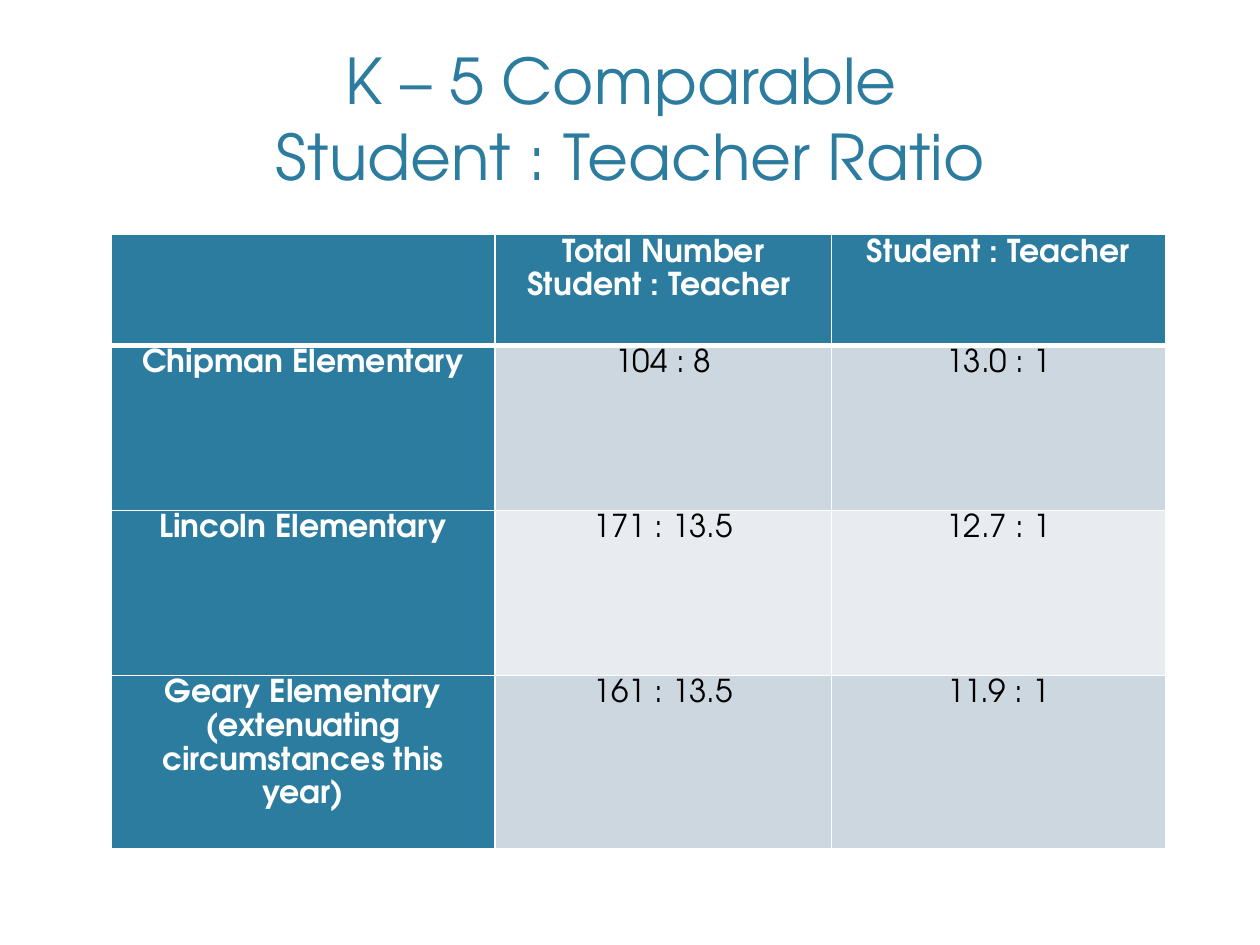
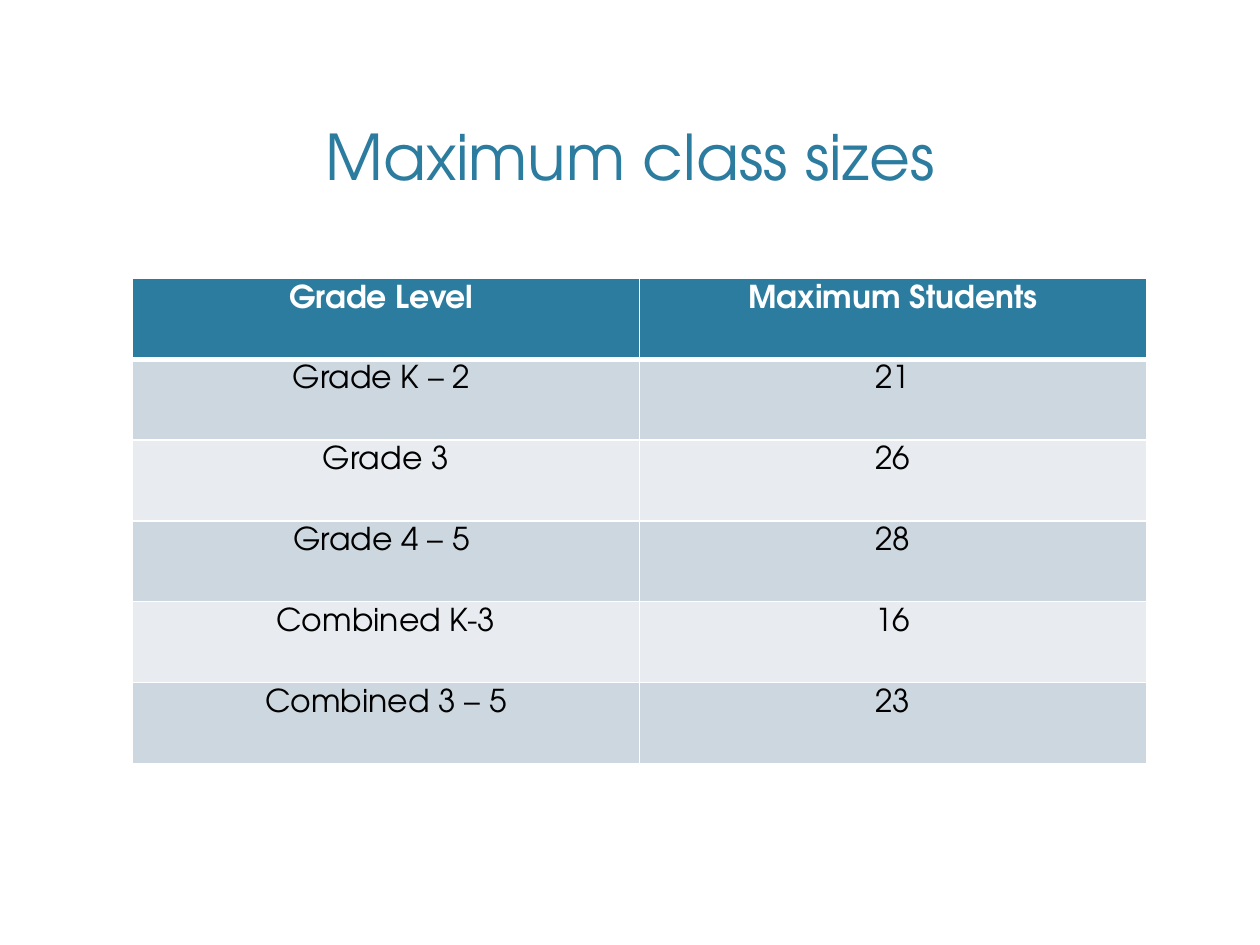
from lxml import etree
from pptx import Presentation
from pptx.dml.color import RGBColor
from pptx.enum.text import MSO_ANCHOR, PP_ALIGN
from pptx.oxml.ns import qn
from pptx.util import Pt

CENTER = PP_ALIGN.CENTER
BOTTOM = MSO_ANCHOR.BOTTOM
FONT = "TeX Gyre Adventor"
COLORS = {"teal": "2C7C9F", "dark": "CDD7DF", "light": "E8ECF0",
          "white": "FFFFFF", "black": "000000"}


def style(frame, size, color, bold=False, spacing=None):
    for para in frame.paragraphs:
        para.alignment = CENTER
        para.line_spacing = spacing
        for run in para.runs:
            run.font.name = FONT
            run.font.size = Pt(size)
            run.font.bold = bold
            run.font.color.rgb = RGBColor.from_string(COLORS[color])


def border(cell, widths):
    """Draw white cell edges; widths maps L, R, T and B to points."""
    props = cell._tc.get_or_add_tcPr()
    for side, width in widths.items():
        line = etree.SubElement(props, qn(f"a:ln{side}"), w=str(Pt(width)))
        fill = etree.SubElement(line, qn("a:solidFill"))
        etree.SubElement(fill, qn("a:srgbClr"), val=COLORS["white"])


slides = [
    {"title": "K – 5 Comparable \vStudent : Teacher Ratio",
     "top": 8.64, "height": 105.12,
     "left": 63.36, "down": 133.92,
     "cols": [219.6, 192.24, 190.8], "rows": [63.36] + [94.32] * 3,
     "margins": (5.04, 0), "spacing": 1.15, "labels": True,
     "cells": [
         ["", "Total Number Student : Teacher ", "Student : Teacher"],
         ["Chipman Elementary", "104 : 8", "13.0 : 1"],
         ["Lincoln Elementary", "171 : 13.5", "12.7 : 1"],
         ["Geary Elementary (extenuating circumstances this year)",
          "161 : 13.5", "11.9 : 1"]]},
    {"title": "Maximum class sizes",
     "top": 51.84, "height": 61.92,
     "left": 75.6, "down": 159.12,
     "cols": [289.8] * 2, "rows": [46.2] * 6,
     "margins": (7.2, 3.6), "spacing": None, "labels": False,
     "cells": [
         ["Grade Level ", "Maximum Students"],
         ["Grade K – 2 ", "21"],
         ["Grade 3", "26"],
         ["Grade 4 – 5 ", "28"],
         ["Combined K-3", "16"],
         ["Combined 3 – 5", "23"]]},
]

deck = Presentation()
deck.slide_width, deck.slide_height = Pt(720), Pt(540)

for data in slides:
    slide = deck.slides.add_slide(deck.slide_layouts[6])

    title = slide.shapes.add_textbox(
        Pt(43.2), Pt(data["top"]), Pt(633.6), Pt(data["height"])).text_frame
    title.word_wrap = True
    title.vertical_anchor = BOTTOM
    title.text = data["title"]
    style(title, 36, "teal")

    cols, rows = data["cols"], data["rows"]
    table = slide.shapes.add_table(
        len(rows), len(cols), Pt(data["left"]), Pt(data["down"]),
        Pt(sum(cols)), Pt(sum(rows))).table
    table.first_col = data["labels"]
    for col, width in zip(table.columns, cols):
        col.width = Pt(width)
    for row, height in zip(table.rows, rows):
        row.height = Pt(height)

    side, edge = data["margins"]
    for r, texts in enumerate(data["cells"]):
        for c, text in enumerate(texts):
            cell = table.cell(r, c)
            head = r == 0 or (data["labels"] and c == 0)
            band = "teal" if head else "dark" if r % 2 else "light"
            border(cell, {"L": 1, "R": 1, "T": 3 if r == 1 else 1,
                          "B": 3 if r == 0 else 1})
            cell.fill.solid()
            cell.fill.fore_color.rgb = RGBColor.from_string(COLORS[band])
            cell.margin_left = cell.margin_right = Pt(side)
            cell.margin_top = cell.margin_bottom = Pt(edge)
            cell.text_frame.text = text
            style(cell.text_frame, 18, "white" if head else "black",
                  head, data["spacing"])

deck.save("out.pptx")
